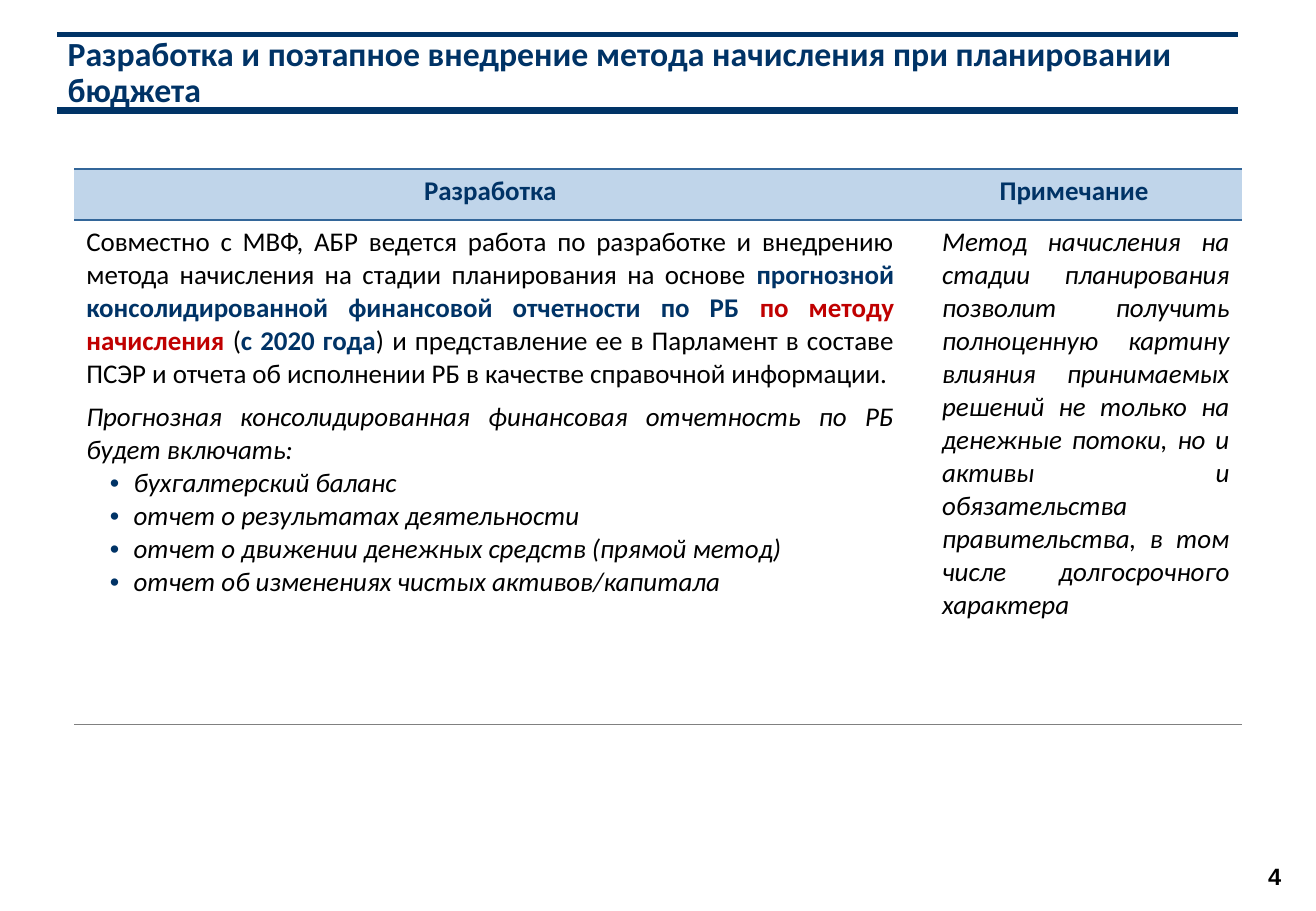
from dataclasses import dataclass
from lxml.etree import SubElement
from pptx import Presentation
from pptx.dml.color import RGBColor
from pptx.enum.shapes import MSO_CONNECTOR, MSO_SHAPE
from pptx.enum.text import MSO_ANCHOR, PP_ALIGN
from pptx.oxml import parse_xml
from pptx.oxml.ns import nsdecls, qn
from pptx.util import Pt


@dataclass(frozen=True)
class Theme:
    navy: str = "003366"
    steel: str = "336699"
    pale: str = "C0D5EA"
    red: str = "C00000"
    gray: str = "808080"
    black: str = "000000"
    white: str = "FFFFFF"
    face: str = "Calibri"
    plain: str = "Arial"
    title: int = 20
    body: int = 16
    page: int = 14


def apply(target, values):
    for key, value in values.items():
        setattr(target, key, value)


class Maker:
    def __init__(self, theme, slide):
        self.theme = theme
        self.slide = slide

    def words(self, para, runs, form=None, **base):
        apply(para, form or {})
        for text, extra in runs:
            style = {"name": self.theme.face, "size": self.theme.body,
                     "bold": False, "italic": False, "color": self.theme.black}
            style.update(base)
            style.update(extra)
            run = para.add_run()
            run.text = text
            run.font.color.rgb = RGBColor.from_string(style.pop("color"))
            style["size"] = Pt(style["size"])
            apply(run.font, style)

    def indent(self, para, left, hang=0, bullet=None):
        props = para._p.get_or_add_pPr()
        props.set("marL", str(Pt(left)))
        props.set("indent", str(Pt(hang)))
        if bullet:
            color = SubElement(props, qn("a:buClr"))
            SubElement(color, qn("a:srgbClr"), val=self.theme.navy)
            SubElement(props, qn("a:buFont"), typeface=self.theme.plain)
            SubElement(props, qn("a:buChar"), char=bullet)

    def rule(self, left, right, top, width):
        line = self.slide.shapes.add_connector(
            MSO_CONNECTOR.STRAIGHT, Pt(left), Pt(top), Pt(right), Pt(top))
        line.line.color.rgb = RGBColor.from_string(self.theme.navy)
        line.line.width = Pt(width)
        SubElement(line._element.spPr, qn("a:effectLst"))

    def label(self, box, text, form, **style):
        shape = self.slide.shapes.add_textbox(*map(Pt, box))
        apply(shape.text_frame, {"word_wrap": True, "vertical_anchor": MSO_ANCHOR.MIDDLE})
        self.words(shape.text_frame.paragraphs[0], [(text, {})], form, **style)

    def badge(self, box, text, **style):
        shape = self.slide.shapes.add_shape(MSO_SHAPE.RECTANGLE, *map(Pt, box))
        shape.shadow.inherit = False
        shape.fill.solid()
        shape.fill.fore_color.rgb = RGBColor.from_string(self.theme.white)
        shape.line.fill.background()
        shape.text_frame.vertical_anchor = MSO_ANCHOR.MIDDLE
        self.words(shape.text_frame.paragraphs[0], [(text, {})],
                   {"alignment": PP_ALIGN.CENTER}, **style)

    def grid(self, box, cols, rows):
        frame = self.slide.shapes.add_table(len(rows), len(cols), *map(Pt, box))
        table = frame.table
        apply(table, {"first_row": False, "horz_banding": False})
        for col, width in zip(table.columns, cols):
            col.width = Pt(width)
        for row, height in zip(table.rows, rows):
            row.height = Pt(height)
        return table

    def dress(self, cell, fill, top, base):
        if fill:
            cell.fill.solid()
            cell.fill.fore_color.rgb = RGBColor.from_string(fill)
        else:
            cell.fill.background()
        props = cell._tc.get_or_add_tcPr()
        for spot, (side, edge) in enumerate(zip("LRTB", (None, None, top, base))):
            if edge:
                color, width = edge
                paint = f'<a:solidFill><a:srgbClr val="{color}"/></a:solidFill>'
            else:
                width, paint = 0, "<a:noFill/>"
            props.insert(spot, parse_xml(
                f'<a:ln{side} {nsdecls("a")} w="{Pt(width)}">{paint}</a:ln{side}>'))


def main():
    deck = Presentation()
    apply(deck, {"slide_width": Pt(780), "slide_height": Pt(540)})
    theme = Theme()
    make = Maker(theme, deck.slides.add_slide(deck.slide_layouts[6]))
    for top, width in ((65.5, 4.5), (20.2, 3)):
        make.rule(34, 733.7, top, width)
    make.badge((732, 500, 47, 39), "4", name=theme.plain, size=theme.page, bold=True)
    make.label((33, 21.6, 703, 44),
               "Разработка и поэтапное внедрение метода начисления при планировании бюджета",
               {"line_spacing": 0.9}, size=theme.title, bold=True, color=theme.navy)

    table = make.grid((44, 100.2, 692, 329), (493.2, 198.8), (30.2, 298.8))
    strong = (theme.steel, 1.5)
    thin = (theme.gray, 0.75)
    for col, head in enumerate(("Разработка", "Примечание")):
        cell = table.cell(0, col)
        make.words(cell.text_frame.paragraphs[0], [(head, {})],
                   {"alignment": PP_ALIGN.CENTER}, bold=True, color=theme.navy)
        make.dress(cell, theme.pale, strong, strong)
        make.dress(table.cell(1, col), None, strong, thin)

    even = {"alignment": PP_ALIGN.JUSTIFY}
    navy = {"bold": True, "color": theme.navy}
    red = {"bold": True, "color": theme.red}
    frame = table.cell(1, 0).text_frame
    make.words(frame.paragraphs[0], [
        ("Совместно с МВФ, АБР ведется работа по разработке и внедрению метода "
         "начисления на стадии планирования на основе ", {}),
        ("прогнозной консолидированной финансовой отчетности по РБ ", navy),
        ("по методу начисления ", red),
        ("(", {}),
        ("с 2020 года", navy),
        (") и представление ее в Парламент в составе ПСЭР и отчета об исполнении РБ "
         "в качестве справочной информации.", {}),
    ], {**even, "space_after": Pt(6)})
    make.words(frame.add_paragraph(), [
        ("Прогнозная консолидированная финансовая отчетность по РБ будет включать:", {})],
        even, italic=True)
    for item in ("бухгалтерский баланс", "отчет о результатах деятельности",
                 "отчет о движении денежных средств (прямой метод)",
                 "отчет об изменениях чистых активов/капитала"):
        para = frame.add_paragraph()
        make.words(para, [(item, {})], even, italic=True)
        make.indent(para, 28, -14, "•")

    para = table.cell(1, 1).text_frame.paragraphs[0]
    make.words(para, [
        ("Метод начисления на стадии планирования позволит получить полноценную картину "
         "влияния принимаемых решений не только на денежные потоки, но и активы и "
         "обязательства правительства, в том числе долгосрочного характера", {})],
        even, italic=True)
    make.indent(para, 14)
    deck.save("out.pptx")


if __name__ == "__main__":
    main()
